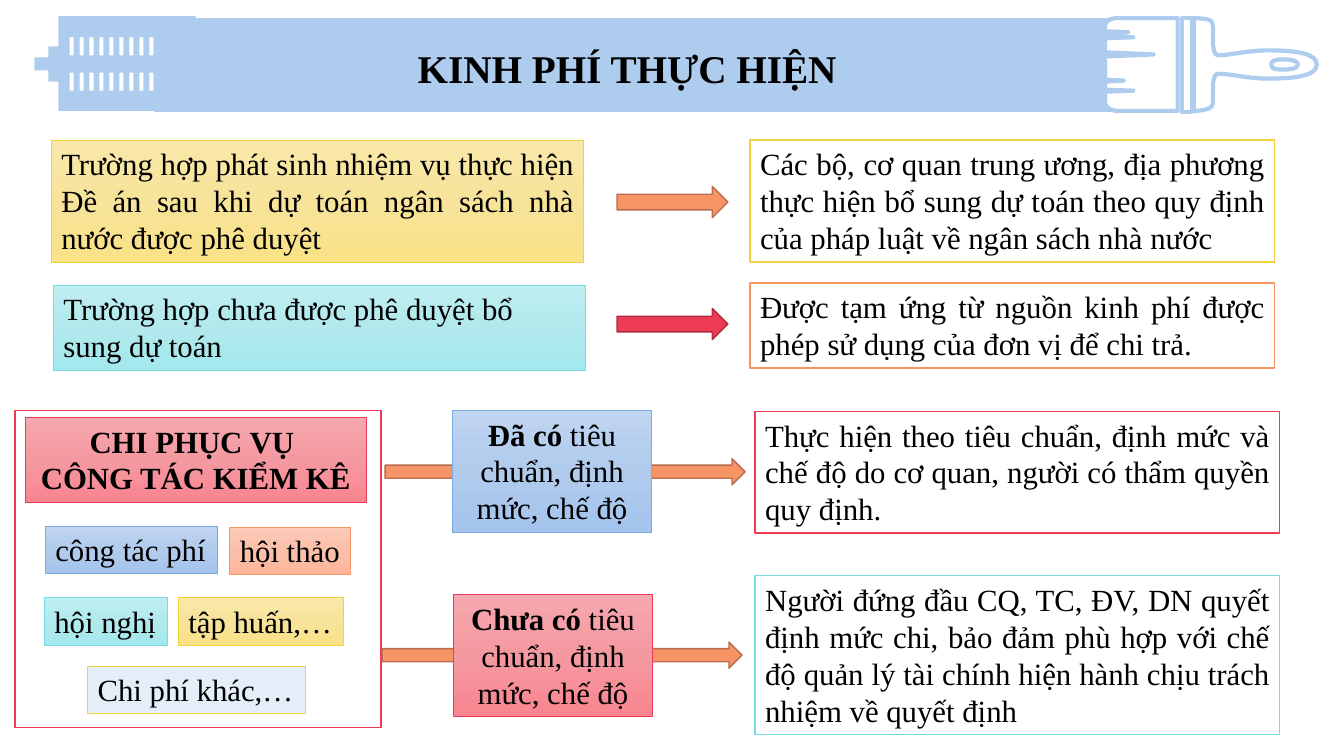
"""Build the slide on how the work is funded."""
from copy import deepcopy
from dataclasses import dataclass

from pptx import Presentation
from pptx.dml.color import RGBColor
from pptx.enum import shapes as kinds, text as txt
from pptx.oxml import ns
from pptx.util import Inches, Pt


@dataclass(frozen=True)
class Theme:
    """Colours, font and type sizes."""
    font: str = "Times New Roman"
    title_size: int = 28
    body_size: int = 22
    ink: str = "000000"
    paper: str = "FFFFFF"
    banner: str = "AECCED"
    yellow: str = "F0D23F"
    orange: str = "F79465"
    rust: str = "B76D4B"
    red: str = "ED3B55"
    wine: str = "AF2C3F"
    teal: str = "77DBE1"
    blue: str = "78AAE1"
    mist: str = "E4EEF9"
    yellow_blend: tuple = ("F9E8A9", "F7E39A", "FAE287")
    teal_blend: tuple = ("BFEEF1", "B1E9ED", "A3E8ED")
    red_blend: tuple = ("F7A7AF", "F599A1", "F88590")
    blue_blend: tuple = ("BFD5F1", "B1CBED", "A4C4ED")
    orange_blend: tuple = ("FDCBB9", "FBBFA9", "FEB59A")


T = Theme()
LEFT, CENTER, JUSTIFY = txt.PP_ALIGN.LEFT, txt.PP_ALIGN.CENTER, txt.PP_ALIGN.JUSTIFY
TITLE = "KINH PHÍ THỰC HIỆN"
STANDARD = "tiêu chuẩn, định mức, chế độ"
LINE_HEIGHT = 0.37
CASE_WIDTH, RULE_WIDTH, STATUS_WIDTH = 5.28, 5.2, 1.97

# left, top, width, number of lines, fill, outline, alignment, paragraphs of (text, bold)
BOXES = [
    (0.51, 1.39, CASE_WIDTH, 3, T.yellow_blend, T.yellow, JUSTIFY,
     [[("Trường hợp phát sinh nhiệm vụ thực hiện Đề án sau khi dự toán ngân sách nhà nước được phê duyệt", False)]]),
    (7.44, 2.81, RULE_WIDTH, 2, T.paper, T.orange, JUSTIFY,
     [[("Được tạm ứng từ nguồn kinh phí được phép sử dụng của đơn vị để chi trả.", False)]]),
    (7.44, 1.39, RULE_WIDTH, 3, T.paper, T.yellow, JUSTIFY,
     [[("Các bộ, cơ quan trung ương, địa phương thực hiện bổ sung dự toán theo quy định của pháp luật về ngân sách nhà nước", False)]]),
    (0.53, 2.83, CASE_WIDTH, 2, T.teal_blend, T.teal, LEFT,
     [[("Trường hợp chưa được phê duyệt bổ sung dự toán", False)]]),
    (0.25, 4.14, 3.38, 2, T.red_blend, T.red, CENTER,
     [[("CHI PHỤC VỤ ", True)], [("CÔNG TÁC KIỂM KÊ", True)]]),
    (4.49, 4.07, STATUS_WIDTH, 3, T.blue_blend, T.blue, CENTER,
     [[("Đã có ", True), (STANDARD, False)]]),
    (7.49, 4.08, RULE_WIDTH, 3, T.paper, T.red, JUSTIFY,
     [[("Thực hiện theo tiêu chuẩn, định mức và chế độ do cơ quan, người có thẩm quyền quy định. ", False)]]),
    (7.49, 5.71, RULE_WIDTH, 4, T.paper, T.teal, JUSTIFY,
     [[("Người đứng đầu CQ, TC, ĐV, DN quyết định mức chi, bảo đảm phù hợp với chế độ quản lý tài chính hiện hành chịu trách nhiệm về quyết định", False)]]),
    (4.5, 5.9, STATUS_WIDTH, 3, T.red_blend, T.red, CENTER,
     [[("Chưa có ", True), (STANDARD, False)]]),
]
# left, top, width, fill, outline, label
COSTS = [
    (1.77, 5.93, 1.64, T.yellow_blend, T.yellow, "tập huấn,…"),
    (0.45, 5.22, 1.71, T.blue_blend, T.blue, "công tác phí"),
    (0.44, 5.93, 1.22, T.teal_blend, T.teal, "hội nghị"),
    (2.28, 5.23, 1.2, T.orange_blend, T.orange, "hội thảo"),
    (0.87, 6.61, 2.16, T.mist, T.yellow, "Chi phí khác,…"),
]
# left, top, width, height, fill, outline
ARROWS = [
    (3.82, 4.55, 3.57, 0.26, T.orange, T.rust),
    (3.79, 6.37, 3.57, 0.26, T.orange, T.rust),
    (6.12, 1.85, 1.1, 0.31, T.orange, T.rust),
    (6.12, 3.06, 1.1, 0.31, T.red, T.wine),
]
# Contours: two numbers run straight to a point, six bend to one
HANDLE = [
    [(12.61, 0.64), (12.61, 0.67, 12.62, 0.69, 12.73, 0.69), (12.83, 0.69, 12.87, 0.67, 12.87, 0.64),
     (12.87, 0.61, 12.83, 0.59, 12.73, 0.59), (12.63, 0.59, 12.61, 0.61, 12.61, 0.64)],
    [(11.84, 1.1), (11.84, 0.18), (11.84, 0.18, 11.95, 0.18, 12, 0.2), (12.03, 0.22, 12.03, 0.26, 12.03, 0.3),
     (12.03, 0.45), (12.04, 0.49, 12.04, 0.52, 12.06, 0.54), (12.1, 0.57, 12.36, 0.5, 12.56, 0.5),
     (12.77, 0.5, 13.06, 0.51, 13.06, 0.64), (13.06, 0.77, 12.77, 0.78, 12.56, 0.78),
     (12.36, 0.78, 12.1, 0.71, 12.06, 0.74), (12.04, 0.76, 12.04, 0.79, 12.03, 0.83), (12.03, 1.01),
     (12.03, 1.03, 12.02, 1.06, 12, 1.07), (11.95, 1.1, 11.84, 1.1, 11.84, 1.1)],
]
BRISTLES = [
    [(10.96, 1.02), (10.96, 0.91), (11.24, 0.9), (10.96, 0.89), (10.96, 0.81), (11.15, 0.8), (10.96, 0.79),
     (10.96, 0.56), (11.44, 0.54), (10.96, 0.52), (10.96, 0.38), (11.24, 0.37), (10.96, 0.36), (10.96, 0.33),
     (11.19, 0.32), (10.96, 0.31), (10.96, 0.26), (10.96, 0.21, 11.02, 0.18, 11.08, 0.18), (11.68, 0.18),
     (11.68, 1.1), (11.08, 1.1), (11.02, 1.1, 10.96, 1.06, 10.96, 1.02)],
]
SLOTS = [[(x, y), (x + 0.04, y), (x + 0.04, y + 0.18), (x, y + 0.18)]
         for y in (0.37, 0.72) for x in (0.69 + 0.099 * step for step in range(9))]
PLUG = SLOTS + [
    [(0.34, 0.7), (0.34, 0.57), (0.48, 0.57), (0.48, 0.46), (0.58, 0.46), (0.58, 0.16), (1.94, 0.16), (1.94, 0.49),
     (1.68, 0.49), (1.68, 0.78), (1.94, 0.78), (1.94, 1.1), (0.58, 1.1), (0.58, 0.81), (0.48, 0.81), (0.48, 0.7)],
]


def assign(target, values):
    for name, value in values.items():
        setattr(target, name, value)


def paint(shape, fill, outline=None, weight=1):
    shape.shadow.inherit = False
    if isinstance(fill, tuple):
        shape.fill.gradient()
        shape.fill.gradient_angle = 270
        stops = shape._element.spPr.find(".//" + ns.qn("a:gsLst"))
        stops.insert(1, deepcopy(stops[0]))
        stops[1].set("pos", "50000")
        for stop, color in zip(shape.fill.gradient_stops, fill):
            stop.color.rgb = RGBColor.from_string(color)
    else:
        shape.fill.solid()
        shape.fill.fore_color.rgb = RGBColor.from_string(fill)
    if outline:
        shape.line.color.rgb = RGBColor.from_string(outline)
        shape.line.width = Pt(weight)
    else:
        shape.line.fill.background()


def add_block(slide, kind, area, *style):
    block = slide.shapes.add_shape(kind, *map(Inches, area))
    paint(block, *style)
    return block


def flatten(contour, steps=10):
    points = [contour[0]]
    for move in contour[1:]:
        if len(move) == 2:
            points.append(move)
            continue
        knots = [points[-1], move[:2], move[2:4], move[4:]]
        for t in (step / steps for step in range(1, steps + 1)):
            weights = ((1 - t) ** 3, 3 * t * (1 - t) ** 2, 3 * t ** 2 * (1 - t), t ** 3)
            points.append(tuple(sum(w * k[axis] for w, k in zip(weights, knots)) for axis in (0, 1)))
    return [(Inches(x), Inches(y)) for x, y in points]


def add_outline(slide, contours, *style):
    first, *others = map(flatten, contours)
    builder = slide.shapes.build_freeform(*first[0])
    builder.add_line_segments(first[1:], close=True)
    for points in others:
        builder.move_to(*points[0])
        builder.add_line_segments(points[1:], close=True)
    paint(builder.convert_to_shape(), *style)


def write(shape, paragraphs, align, size, frame_format, spacing=None):
    frame = shape.text_frame
    assign(frame, frame_format)
    for index, runs in enumerate(paragraphs):
        paragraph = frame.add_paragraph() if index else frame.paragraphs[0]
        assign(paragraph, {"alignment": align, "line_spacing": spacing})
        for words, bold in runs:
            run = paragraph.add_run()
            run.text = words
            assign(run.font, {"name": T.font, "size": Pt(size), "bold": bold})
            run.font.color.rgb = RGBColor.from_string(T.ink)


def add_banner(slide):
    rect = kinds.MSO_SHAPE.RECTANGLE
    add_block(slide, rect, (1.53, 0.18, 9.76, 0.93), T.banner)
    add_block(slide, rect, (11.72, 0.18, 0.1, 0.93), T.paper, T.banner, 3)
    for contours in (HANDLE, BRISTLES):
        add_outline(slide, contours, T.paper, T.banner, 3)
    title = slide.shapes.title
    slide.shapes._spTree.append(title._element)
    assign(title, dict(zip(("left", "top", "width", "height"), map(Inches, (1.81, 0.38, 8.82, 0.65)))))
    paint(title, T.banner)
    write(title, [[(TITLE, True)]], CENTER, T.title_size,
          {"word_wrap": True, "vertical_anchor": txt.MSO_ANCHOR.MIDDLE, "auto_size": txt.MSO_AUTO_SIZE.NONE}, 0.9)
    add_outline(slide, PLUG, T.banner)


def main():
    deck = Presentation()
    assign(deck, {"slide_width": Inches(13.33), "slide_height": Inches(7.5)})
    slide = deck.slides.add_slide(deck.slide_layouts[5])
    rect = kinds.MSO_SHAPE.RECTANGLE
    add_banner(slide)
    add_block(slide, rect, (0.15, 4.07, 3.63, 3.15), T.paper, T.red)
    for *area, fill, outline in ARROWS:
        add_block(slide, kinds.MSO_SHAPE.RIGHT_ARROW, area, fill, outline)
    fitted = {"vertical_anchor": txt.MSO_ANCHOR.TOP, "auto_size": txt.MSO_AUTO_SIZE.SHAPE_TO_FIT_TEXT}
    for left, top, width, lines, fill, outline, align, paragraphs in BOXES:
        area = (left, top, width, 0.1 + LINE_HEIGHT * lines)
        box = add_block(slide, rect, area, fill, outline, 1 if fill == T.paper else 0.5)
        write(box, paragraphs, align, T.body_size, {**fitted, "word_wrap": True})
    for left, top, width, fill, outline, label in COSTS:
        cost = add_block(slide, rect, (left, top, width, 0.1 + LINE_HEIGHT), fill, outline, 0.5)
        write(cost, [[(label, False)]], LEFT, T.body_size, {**fitted, "word_wrap": False})
    deck.save("out.pptx")


if __name__ == "__main__":
    main()
